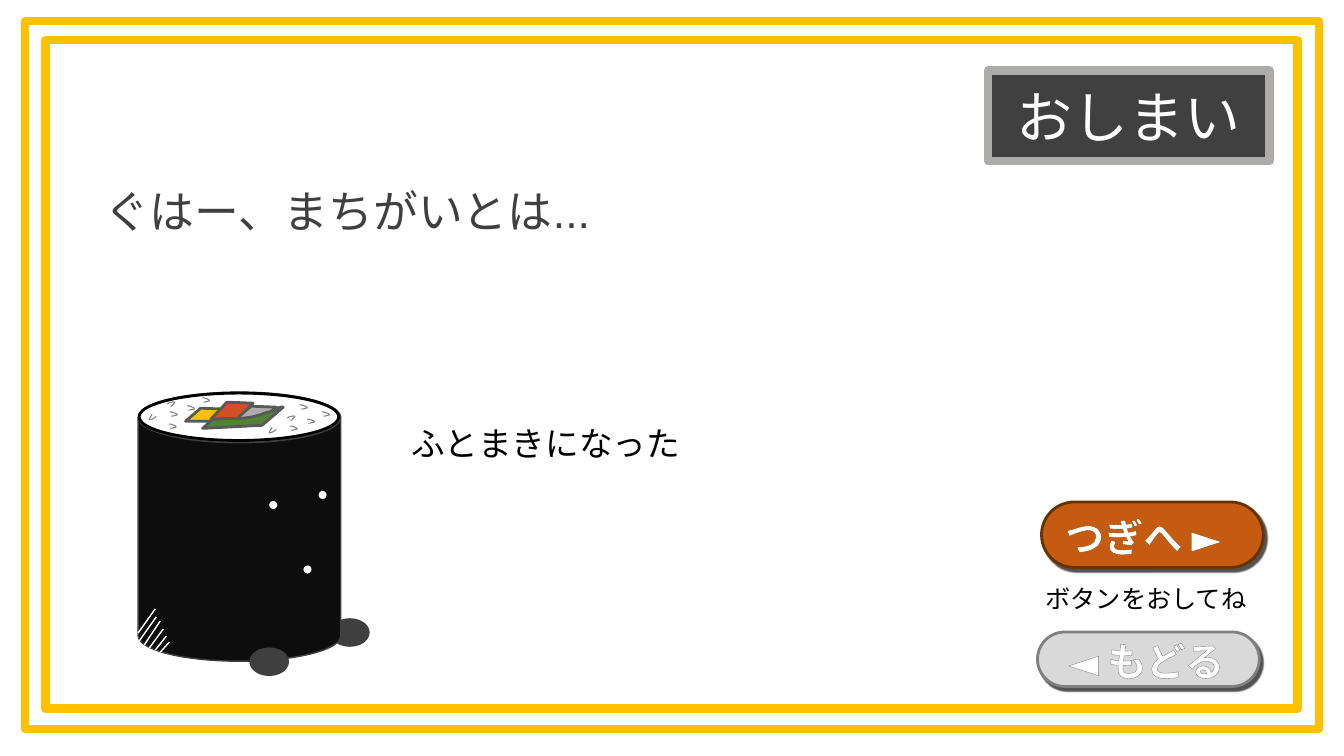
from dataclasses import dataclass

from lxml.etree import SubElement
from pptx import Presentation
from pptx.dml.color import RGBColor
from pptx.enum.lang import MSO_LANGUAGE_ID as Lang
from pptx.enum.shapes import MSO_CONNECTOR as Connector, MSO_SHAPE as Preset
from pptx.enum.text import MSO_ANCHOR as Anchor, MSO_AUTO_SIZE as AutoSize, PP_ALIGN as Align
from pptx.oxml import parse_xml
from pptx.oxml.ns import nsdecls, qn
from pptx.util import Inches, Pt


@dataclass(frozen=True)
class Theme:
    gold: str = "FFC000"
    ink: str = "000000"
    white: str = "FFFFFF"
    charcoal: str = "3F3F3F"
    badge: str = "404040"
    badge_edge: str = "AEABAB"
    seaweed: str = "0D0D0D"
    salmon: str = "D35027"
    tuna: str = "AFABAB"
    cucumber: str = "548235"
    filling_edge: str = "595959"
    grey: str = "808080"
    back: str = "D9D9D9"
    next: str = "C55A11"
    next_edge: str = "663300"
    next_outline: str = "8E4700"
    font: str = "Arial"
    button_font: str = "Noto Sans CJK JP"
    title_size: int = 40
    speech_size: int = 32
    button_size: int = 28
    caption_size: int = 24
    hint_size: int = 18


theme = Theme()


def paint(shape, fill=None, edge=None, width=1):
    shape.shadow.inherit = False
    if fill:
        shape.fill.solid()
        shape.fill.fore_color.rgb = RGBColor.from_string(fill)
    else:
        shape.fill.background()
    if edge:
        shape.line.color.rgb = RGBColor.from_string(edge)
        shape.line.width = Pt(width)
    else:
        shape.line.fill.background()
    return shape


def write(frame, runs, size, color, font=theme.font, align=Align.LEFT, grow=True):
    frame.word_wrap = True
    frame.auto_size = AutoSize.SHAPE_TO_FIT_TEXT if grow else AutoSize.NONE
    paragraph = frame.paragraphs[0]
    paragraph.alignment = align
    for words in runs:
        run = paragraph.add_run()
        run.text = words
        run.font.name = font
        run.font.size = Pt(size)
        run.font.color.rgb = RGBColor.from_string(color)
        run.font.language_id = Lang.JAPANESE
    return paragraph


deck = Presentation()
deck.slide_width, deck.slide_height = Inches(13.33), Inches(7.5)
slide = deck.slides.add_slide(deck.slide_layouts[5])
shapes = slide.shapes

ending = shapes.title
ending.left, ending.top, ending.width, ending.height = map(Inches, (9.8, 0.7, 2.79, 0.9))
paint(ending, theme.badge, theme.badge_edge, 6)
write(ending.text_frame, ["おしまい"], theme.title_size, theme.white, align=Align.CENTER, grow=False)
ending.text_frame.vertical_anchor = Anchor.MIDDLE

for frame_box in ((0.25, 0.21, 12.83, 7.02), (0.45, 0.4, 12.42, 6.63)):
    paint(shapes.add_shape(Preset.RECTANGLE, *map(Inches, frame_box)), edge=theme.gold, width=6)

for words, box, size, color, spacing in (
    ("ぐはー、まちがいとは...", (0.94, 1.51, 7.83, 0.91), theme.speech_size, theme.charcoal, 1.5),
    ("ふとまきになった", (3.98, 4.15, 4.17, 0.5), theme.caption_size, theme.ink, 1),
    ("ボタンをおしてね", (10.27, 5.74, 2.79, 0.4), theme.hint_size, theme.ink, 1),
):
    saying = shapes.add_textbox(*map(Inches, box))
    write(saying.text_frame, [words], size, color).line_spacing = spacing

for preset, box, fill, edge, width in (
    (Preset.OVAL, (3.28, 6.14, 0.38, 0.27), theme.charcoal, theme.charcoal, 1),
    (Preset.CAN, (1.37, 3.89, 2.01, 2.67), theme.seaweed, theme.charcoal, 1),
    (Preset.OVAL, (2.67, 4.97, 0.08, 0.08), theme.white, None, 0),
    (Preset.OVAL, (3.16, 4.87, 0.08, 0.08), theme.white, None, 0),
    (Preset.OVAL, (3.01, 5.61, 0.08, 0.08), theme.white, None, 0),
    (Preset.OVAL, (2.48, 6.43, 0.38, 0.27), theme.charcoal, theme.charcoal, 1),
    (Preset.OVAL, (1.38, 3.9, 1.98, 0.47), theme.white, theme.ink, 2),
):
    roll_part = paint(shapes.add_shape(preset, *map(Inches, box)), fill, edge, width)
    if preset == Preset.CAN:
        roll_part.adjustments[0] = 0.25

for glint_ends in (
    (1.54, 6.04, 1.37, 6.28),
    (1.55, 6.12, 1.38, 6.36),
    (1.59, 6.16, 1.43, 6.4),
    (1.62, 6.24, 1.48, 6.43),
    (1.65, 6.31, 1.54, 6.45),
    (1.68, 6.37, 1.59, 6.47),
):
    glint = shapes.add_connector(Connector.STRAIGHT, *map(Inches, glint_ends))
    glint.line.color.rgb = RGBColor.from_string(theme.white)
    glint.line.width = Pt(1)
    SubElement(glint._element.spPr, qn("a:effectLst"))

egg = [(1.99, 4.05), (1.84, 4.18), (2.11, 4.18), (2.25, 4.06)]
salmon = [(2.25, 3.99), (2.09, 4.16), (2.36, 4.16), (2.51, 4)]
tuna = [(2.49, 4.03), (2.34, 4.16), (2.6, 4.16), (2.74, 4.04)]
cucumber = [(2.11, 4.16), (2.01, 4.25), (2.6, 4.22), (2.81, 4.04),
            (2.75, 4.03, 2.71, 4.09, 2.65, 4.09), (2.44, 4.18, 2.31, 4.14, 2.11, 4.16)]
grain = [(0.03, 0), (0.01, 0.03, 0, 0.05, 0, 0.05),
         (0, 0.06, 0.03, 0.05, 0.04, 0.04), (0.05, 0.04, 0.06, 0.03, 0.07, 0.02)]
grain_places = {
    0: [(2.67, 4.24), (1.48, 4.11)],
    192.7: [(2.85, 4.12), (1.66, 3.98)],
    225.9: [(2.87, 4.22), (2.97, 4.01), (3.19, 4.08), (3.04, 4.15),
            (1.68, 4.08), (1.67, 4.2), (2, 3.94), (1.85, 4.02)],
}
toppings = [
    (outline, (0, 0), 0, fill, theme.filling_edge, 2)
    for outline, fill in ((egg, theme.gold), (salmon, theme.salmon),
                          (tuna, theme.tuna), (cucumber, theme.cucumber))
] + [
    (grain, place, turn, None, theme.grey, 0.75)
    for turn, places in grain_places.items() for place in places
]
for outline, (left, top), turn, fill, edge, width in toppings:
    points = [outline[0]]
    for step in outline[1:]:
        if len(step) == 2:
            points.append(step)
            continue
        curve = (*points[-1], *step)
        for t in (k / 8 for k in range(1, 9)):
            weights = ((1 - t) ** 3, 3 * t * (1 - t) ** 2, 3 * t ** 2 * (1 - t), t ** 3)
            points.append(tuple(sum(w * c for w, c in zip(weights, curve[axis::2])) for axis in (0, 1)))
    thousandths = [((left + x) * 1000, (top + y) * 1000) for x, y in points]
    builder = shapes.build_freeform(*thousandths[0], scale=Inches(1) / 1000)
    builder.add_line_segments(thousandths[1:], close=fill is not None)
    topping = paint(builder.convert_to_shape(), fill, edge, width)
    topping.rotation = turn

for box, fill, edge, label_box, label, outline, widths, right_inset in (
    ((10.29, 6.27, 2.2, 0.54), theme.back, theme.grey, (10.27, 6.27, 2.2, 0.57),
     ["◄ ", "もどる"], theme.grey, (1, 1.5), 0.1),
    ((10.33, 4.98, 2.2, 0.65), theme.next, theme.next_edge, (10.33, 5.04, 2.2, 0.57),
     ["つぎ", "へ ", "►"], theme.next_outline, (1, 1.5, 1), 0.28),
):
    button = paint(shapes.add_shape(Preset.ROUNDED_RECTANGLE, *map(Inches, box)), fill, edge, 2)
    button.adjustments[0] = 0.5
    button._element.spPr.find(qn("a:effectLst")).append(parse_xml(
        f'<a:outerShdw {nsdecls("a")} blurRad="{Pt(1)}" dist="{Pt(3)}" dir="{50 * 60000}" algn="tl" '
        f'rotWithShape="0"><a:srgbClr val="{theme.ink}"><a:alpha val="68000"/></a:srgbClr></a:outerShdw>'))
    caption = shapes.add_textbox(*map(Inches, label_box)).text_frame
    caption.margin_right = Inches(right_inset)
    lettering = write(caption, label, theme.button_size, theme.white, theme.button_font, Align.CENTER)
    for run, width in zip(lettering.runs, widths):
        run.font.bold = True
        properties = run._r.get_or_add_rPr()
        properties.insert(0, parse_xml(
            f'<a:ln {nsdecls("a")} w="{Pt(width)}"><a:solidFill><a:srgbClr val="{outline}"/></a:solidFill></a:ln>'))
        SubElement(properties, qn("a:ea"), typeface=theme.button_font)

deck.save("out.pptx")
